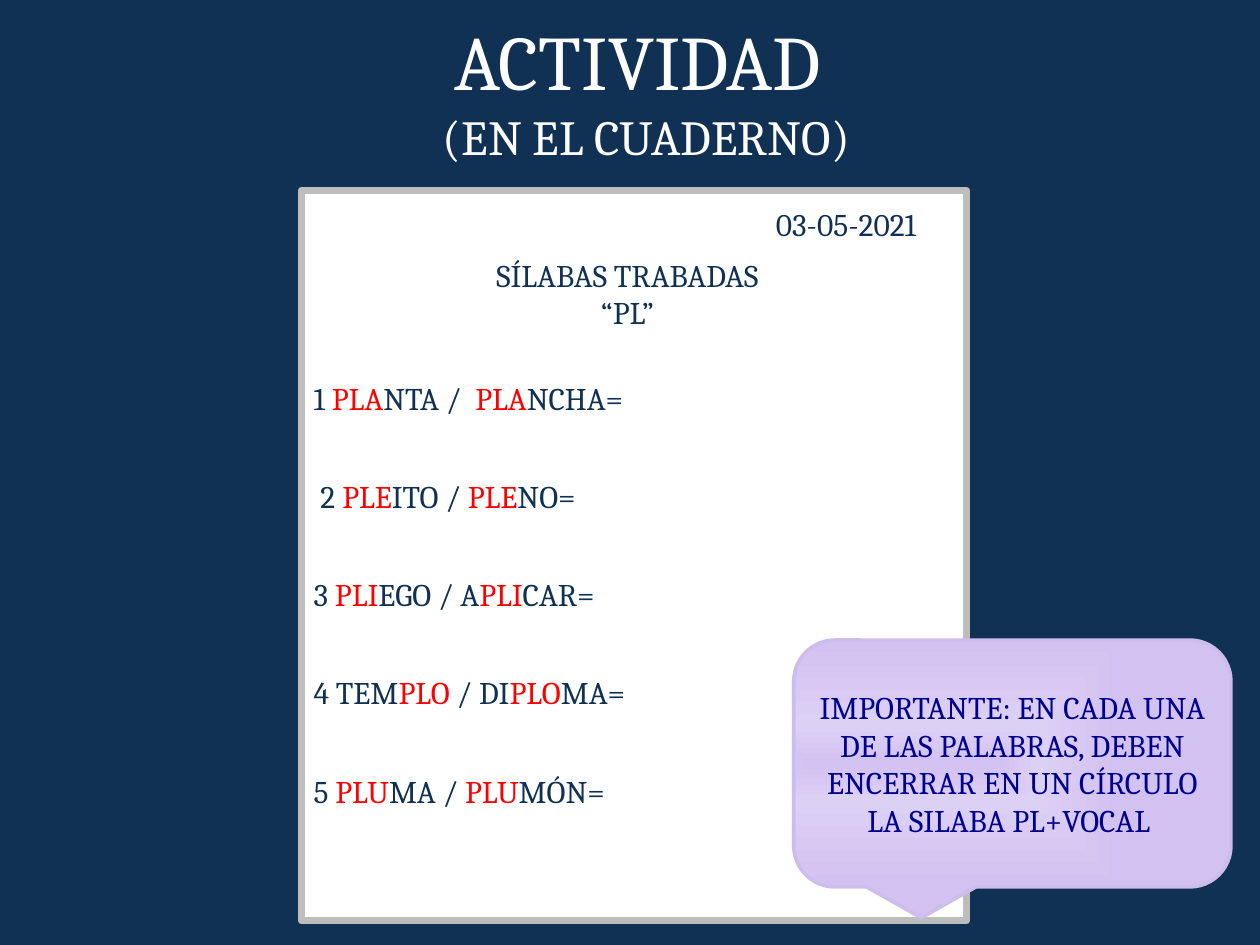
from pptx import Presentation
from pptx.dml.color import RGBColor
from pptx.enum.shapes import MSO_SHAPE as Shape
from pptx.enum.text import MSO_ANCHOR as Anchor, MSO_AUTO_SIZE as AutoSize, PP_ALIGN as Align
from pptx.oxml import parse_xml
from pptx.oxml.ns import nsdecls
from pptx.util import Inches, Pt

NAVY = RGBColor(0x10, 0x31, 0x54)
WHITE = RGBColor(0xFF, 0xFF, 0xFF)
RED = RGBColor(0xFF, 0x00, 0x00)
GREY = RGBColor(0xBD, 0xBD, 0xBD)
INK_BLUE = RGBColor(0x00, 0x00, 0x90)
LILAC = RGBColor(0xD2, 0xC2, 0xF1)
PALE_LILAC = RGBColor(0xDC, 0xD0, 0xF4)
LILAC_EDGE = RGBColor(0xCD, 0xBD, 0xED)

# Syllables between asterisks are highlighted
WORD_PAIRS = [
    "1 *PLA*NTA /  *PLA*NCHA=",
    " 2 *PLE*ITO / *PLE*NO=",
    "3 *PLI*EGO / A*PLI*CAR=",
    "4 TEM*PLO */ DI*PLO*MA=",
    "5 *PLU*MA / *PLU*MÓN=",
]


class Worksheet:
    font = "Cambria"
    body_size = 18

    def __init__(self, slide):
        self.slide = slide

    def style(self, run, color, size=None):
        run.font.name = self.font
        run.font.size = Pt(size or self.body_size)
        run.font.color.rgb = color

    def text_box(self, box, anchor=Anchor.TOP, auto_size=AutoSize.SHAPE_TO_FIT_TEXT):
        frame = self.slide.shapes.add_textbox(*map(Inches, box)).text_frame
        frame.word_wrap = True
        frame.auto_size = auto_size
        frame.vertical_anchor = anchor
        return frame

    def title(self, box, heading, subheading):
        frame = self.text_box(box, Anchor.BOTTOM, AutoSize.NONE)
        paragraph = frame.paragraphs[0]
        paragraph.text = f"{heading}\v{subheading}"
        paragraph.alignment = Align.CENTER
        for run, size in zip(paragraph.runs, (44, 28)):
            self.style(run, WHITE, size)

    def text(self, box, text, align=Align.LEFT):
        frame = self.text_box(box)
        frame.text = text
        for paragraph in frame.paragraphs:
            paragraph.alignment = align
            for run in paragraph.runs:
                self.style(run, NAVY)

    def word_list(self, box, lines):
        frame = self.text_box(box)
        for index, line in enumerate(lines):
            paragraph = frame.add_paragraph() if index else frame.paragraphs[0]
            paragraph.line_spacing = 1.3
            paragraph.space_after = Pt(28)
            for part, piece in enumerate(line.split("*")):
                run = paragraph.add_run()
                run.text = piece
                self.style(run, RED if part % 2 else NAVY)

    def shape(self, kind, box, edge, width):
        shape = self.slide.shapes.add_shape(kind, *map(Inches, box))
        shape.shadow.inherit = False
        shape.line.color.rgb = edge
        shape.line.width = Pt(width)
        return shape

    def page(self, box):
        page = self.shape(Shape.RECTANGLE, box, GREY, 4)
        page.fill.solid()
        page.fill.fore_color.rgb = WHITE

    def callout(self, box, text):
        callout = self.shape(Shape.ROUNDED_RECTANGULAR_CALLOUT, box, LILAC_EDGE, 2)
        stops = "".join(
            f'<a:gs pos="{position * 1000}"><a:srgbClr val="{color}"/></a:gs>'
            for position, color in ((0, LILAC), (30, PALE_LILAC), (100, LILAC))
        )
        gradient = parse_xml(
            f'<a:gradFill {nsdecls("a")} rotWithShape="1"><a:gsLst>{stops}</a:gsLst>'
            '<a:path path="rect"><a:fillToRect l="50000" t="0" r="100000" b="0"/>'
            "</a:path></a:gradFill>"
        )
        callout._element.spPr.prstGeom.addnext(gradient)
        frame = callout.text_frame
        frame.word_wrap = True
        frame.vertical_anchor = Anchor.MIDDLE
        frame.text = text
        frame.paragraphs[0].alignment = Align.CENTER
        self.style(frame.paragraphs[0].runs[0], INK_BLUE)


def main():
    deck = Presentation()
    deck.slide_width, deck.slide_height = Inches(10), Inches(7.5)
    slide = deck.slides.add_slide(deck.slide_layouts[6])
    slide.background.fill.solid()
    slide.background.fill.fore_color.rgb = NAVY
    sheet = Worksheet(slide)

    # Heading
    sheet.title((0.6, 0.12, 9.06, 1.24), "ACTIVIDAD ", "(EN EL CUADERNO)")

    # Notebook page
    sheet.page((2.39, 1.51, 5.28, 5.8))
    sheet.text((6.06, 1.58, 1.61, 0.4), "03-05-2021")
    sheet.text((3.05, 1.98, 3.86, 0.71), "SÍLABAS TRABADAS\n“PL”", Align.CENTER)
    sheet.word_list((2.39, 2.87, 5.28, 3.63), WORD_PAIRS)

    # Reminder
    sheet.callout(
        (6.3, 5.08, 3.47, 1.96),
        "IMPORTANTE: EN CADA UNA DE LAS PALABRAS, DEBEN "
        "ENCERRAR EN UN CÍRCULO LA SILABA PL+VOCAL ",
    )

    deck.save("out.pptx")


if __name__ == "__main__":
    main()
